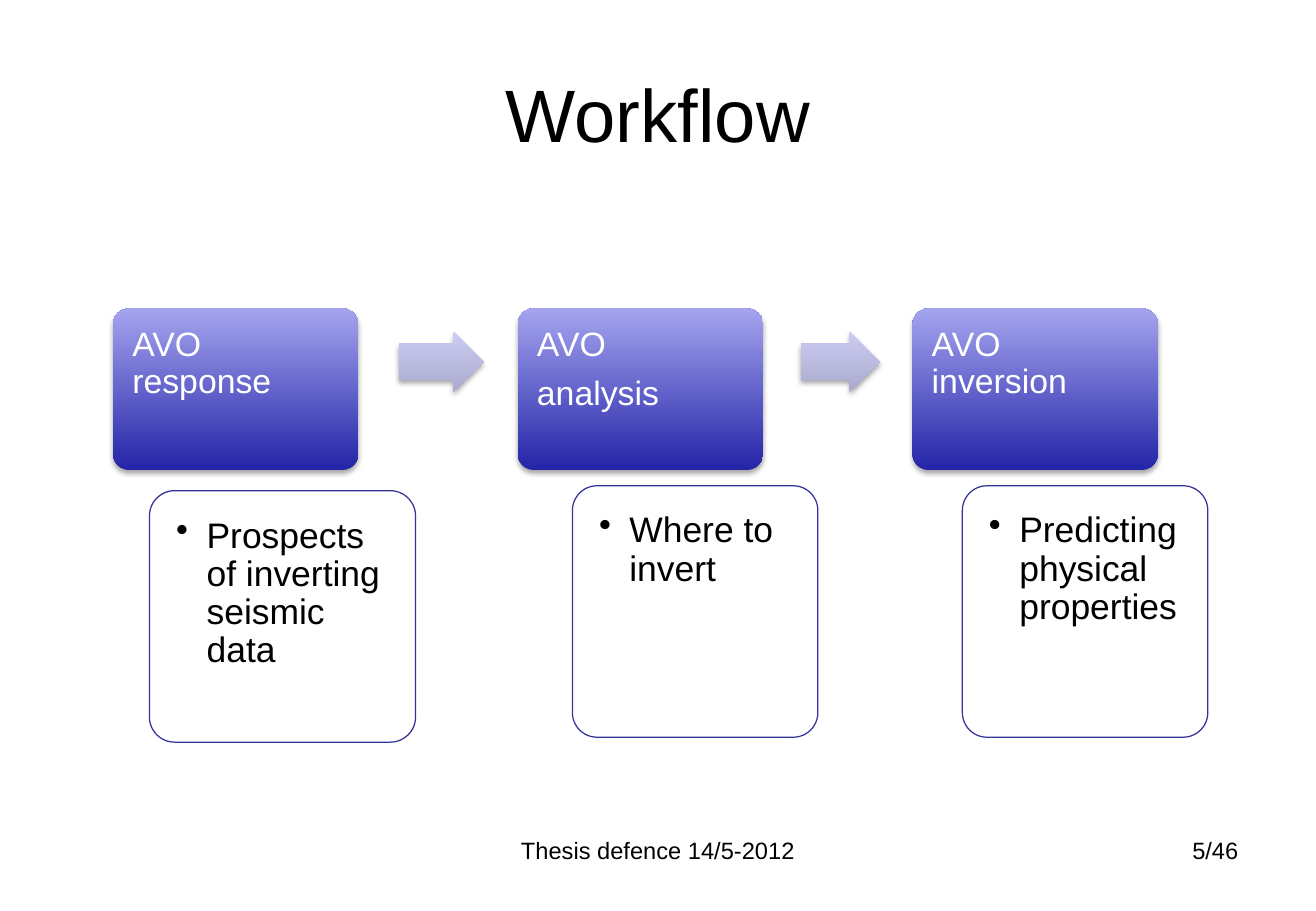
import pptx
import pptx.util
import pptx.dml.color
import pptx.enum.shapes
import pptx.enum.text
import pptx.oxml
import pptx.oxml.ns

WIDTH, HEIGHT = 10.83, 7.5
HEAD_WIDTH, HEAD_HEIGHT, CARD_HEIGHT = 18.65, 17.73, 27.6
ARROW_TOP, ARROW_HEIGHT = 36.4, 6.67
STAGES = [
    ((8.59, 33.87, 22.99, 47.6), 20.22, "AVO response", "Prospects of inverting seismic data"),
    ((39.34, 33.87, 22.81, 47.06), HEAD_WIDTH, "AVO\nanalysis", "Where to invert"),
    ((69.34, 33.87, 22.44, 47.06), HEAD_WIDTH, "AVO inversion", "Predicting physical properties"),
]
ARROWS = [(30.29, 6.46), (60.85, 6)]
Align = pptx.enum.text.PP_ALIGN
Anchor = pptx.enum.text.MSO_ANCHOR
Shape = pptx.enum.shapes.MSO_SHAPE


def color(value):
    """Turn a hex string into a colour."""
    return pptx.dml.color.RGBColor.from_string(value)


def place(box):
    """Turn percentages of the slide's size into lengths."""
    return [pptx.util.Inches(share * size / 100)
            for share, size in zip(box, (WIDTH, HEIGHT, WIDTH, HEIGHT))]


def add_xml(parent, xml):
    """Append a drawing element to a parent element."""
    namespace = pptx.oxml.ns.nsdecls("a")
    parent.append(pptx.oxml.parse_xml(xml.replace("NS", namespace, 1)))


def write(shape, text, size, ink="000000", align=Align.LEFT, anchor=Anchor.TOP,
          margins=(0.1, 0.05), spacing=1, after=0, bullet=False):
    """Fill a shape with formatted paragraphs."""
    frame = shape.text_frame
    frame.word_wrap = True
    frame.vertical_anchor = anchor
    frame.margin_left = frame.margin_right = pptx.util.Inches(margins[0])
    frame.margin_top = frame.margin_bottom = pptx.util.Inches(margins[1])
    frame.text = text
    for paragraph in frame.paragraphs:
        paragraph.alignment = align
        paragraph.line_spacing = spacing
        paragraph.space_after = pptx.util.Pt(after)
        if bullet:
            properties = paragraph._p.get_or_add_pPr()
            indent = pptx.util.Inches(0.25)
            properties.set("marL", str(indent))
            properties.set("indent", str(-indent))
            add_xml(properties, '<a:buChar NS char="•"/>')
        paragraph.font.name = "Arial"
        paragraph.font.size = pptx.util.Pt(size)
        paragraph.font.color.rgb = color(ink)


def add_label(slide, box, text, size, **options):
    """Place a plain text box."""
    write(slide.shapes.add_textbox(*place(box)), text, size, **options)


def add_glossy(slide, kind, box, bottom, top, adjustment):
    """Place a shape with a vertical gradient and a soft shadow."""
    shape = slide.shapes.add_shape(kind, *place(box))
    shape.adjustments[0] = adjustment
    shape.line.fill.background()
    shape.fill.gradient()
    shape.fill.gradient_angle = 90
    for stop, value in zip(shape.fill.gradient_stops, (bottom, top)):
        stop.color.rgb = color(value)
    shape.shadow.inherit = False
    effects = shape._element.spPr.find(pptx.oxml.ns.qn("a:effectLst"))
    add_xml(effects, '<a:outerShdw NS blurRad="40000" dist="23000" dir="5400000" rotWithShape="0">'
                     '<a:srgbClr val="000000"><a:alpha val="35000"/></a:srgbClr></a:outerShdw>')
    return shape


def add_stage(slide, box, card_width, heading, detail):
    """Place a heading at the top left of the box and its card at the bottom right."""
    left, top, width, height = box
    head = add_glossy(slide, Shape.ROUNDED_RECTANGLE, (left, top, HEAD_WIDTH, HEAD_HEIGHT),
                      "2424A8", "A4A4EF", 0.1)
    write(head, heading, 20, ink="FFFFFF", margins=(0.12, 0.12), spacing=0.9, after=7)
    card_box = (left + width - card_width, top + height - CARD_HEIGHT, card_width, CARD_HEIGHT)
    card = slide.shapes.add_shape(Shape.ROUNDED_RECTANGLE, *place(card_box))
    card.adjustments[0] = 0.1
    card.shadow.inherit = False
    card.fill.solid()
    card.fill.fore_color.rgb = color("FFFFFF")
    card.line.color.rgb = color("333399")
    card.line.width = pptx.util.Pt(0.75)
    write(card, detail, 21, margins=(0.16, 0.16), spacing=0.9, after=3, bullet=True)


def add_workflow(slide):
    """Place the stages and the arrows between them."""
    for stage in STAGES:
        add_stage(slide, *stage)
    for left, width in ARROWS:
        add_glossy(slide, Shape.RIGHT_ARROW, (left, ARROW_TOP, width, ARROW_HEIGHT),
                   "AAAACE", "CDCDF4", 0.6)


def main():
    """Build and save the slide."""
    presentation = pptx.Presentation()
    presentation.slide_width = pptx.util.Inches(WIDTH)
    presentation.slide_height = pptx.util.Inches(HEIGHT)
    slide = presentation.slides.add_slide(presentation.slide_layouts[6])
    add_label(slide, (5, 4, 90, 16.67), "Workflow", 44, align=Align.CENTER, anchor=Anchor.MIDDLE)
    add_workflow(slide)
    add_label(slide, (34.16, 91.07, 31.67, 6.93), "Thesis defence 14/5-2012", 14, align=Align.CENTER)
    add_label(slide, (71.65, 91.07, 23.36, 6.93), "5/46", 14, align=Align.RIGHT)
    presentation.save("out.pptx")


if __name__ == "__main__":
    main()
